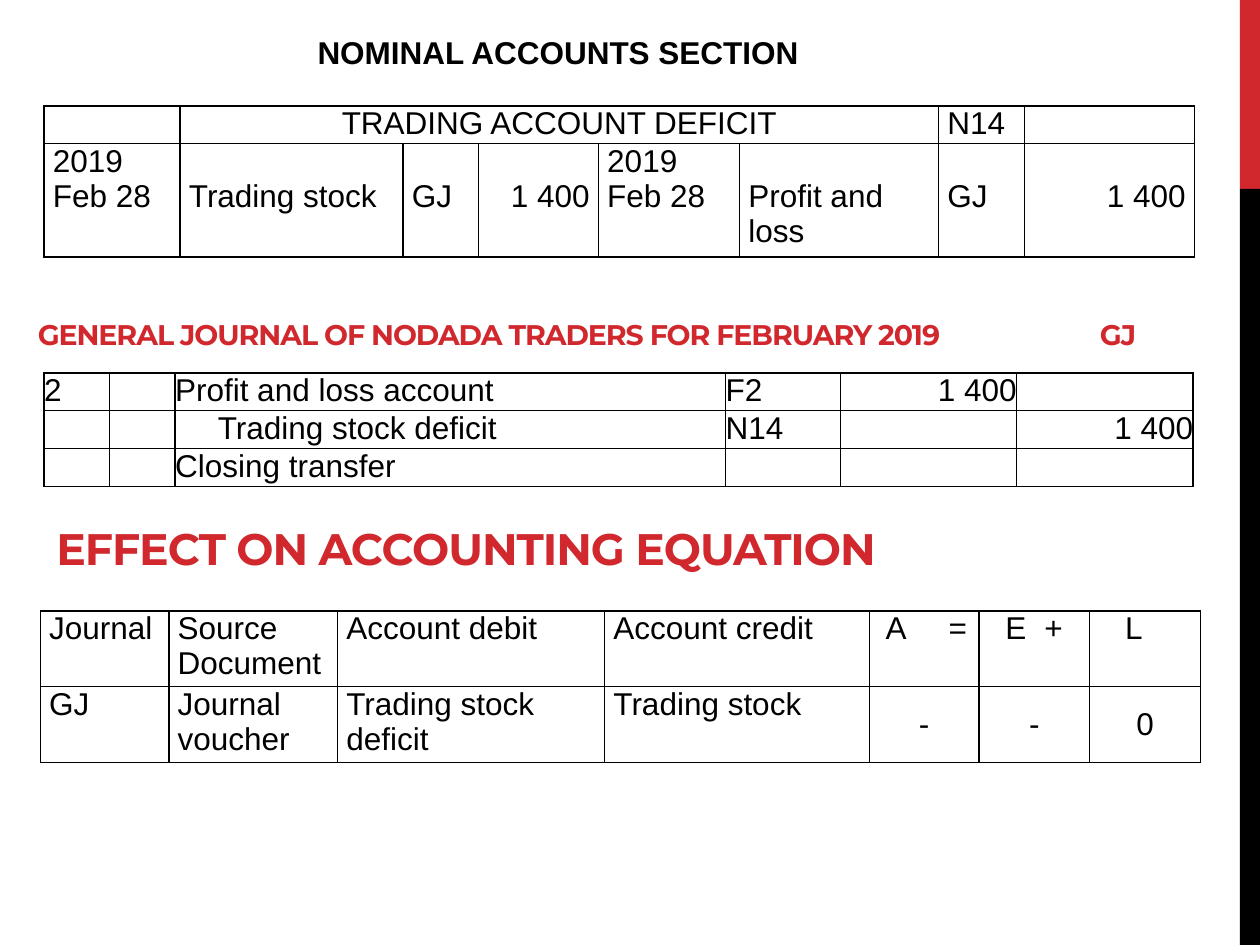
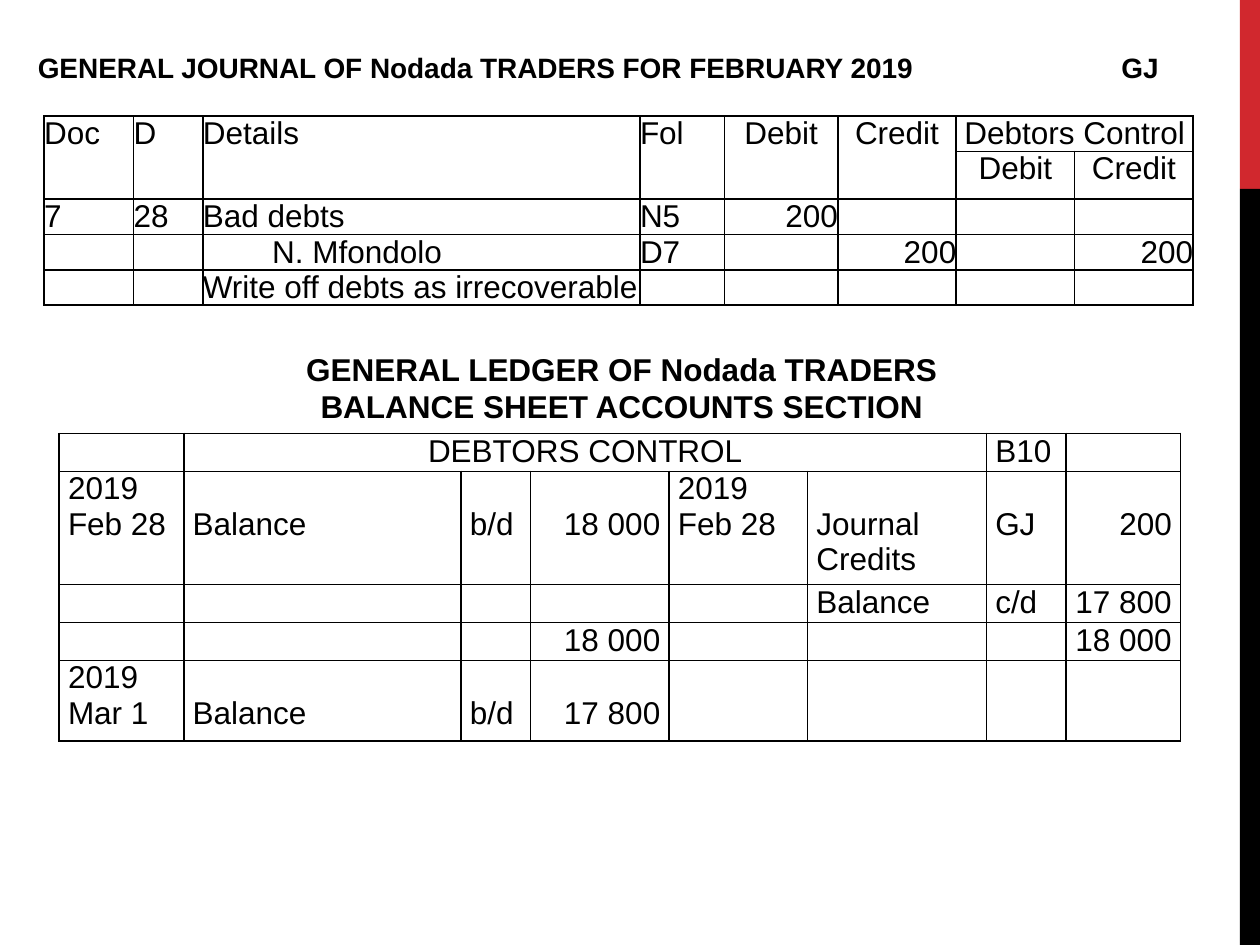
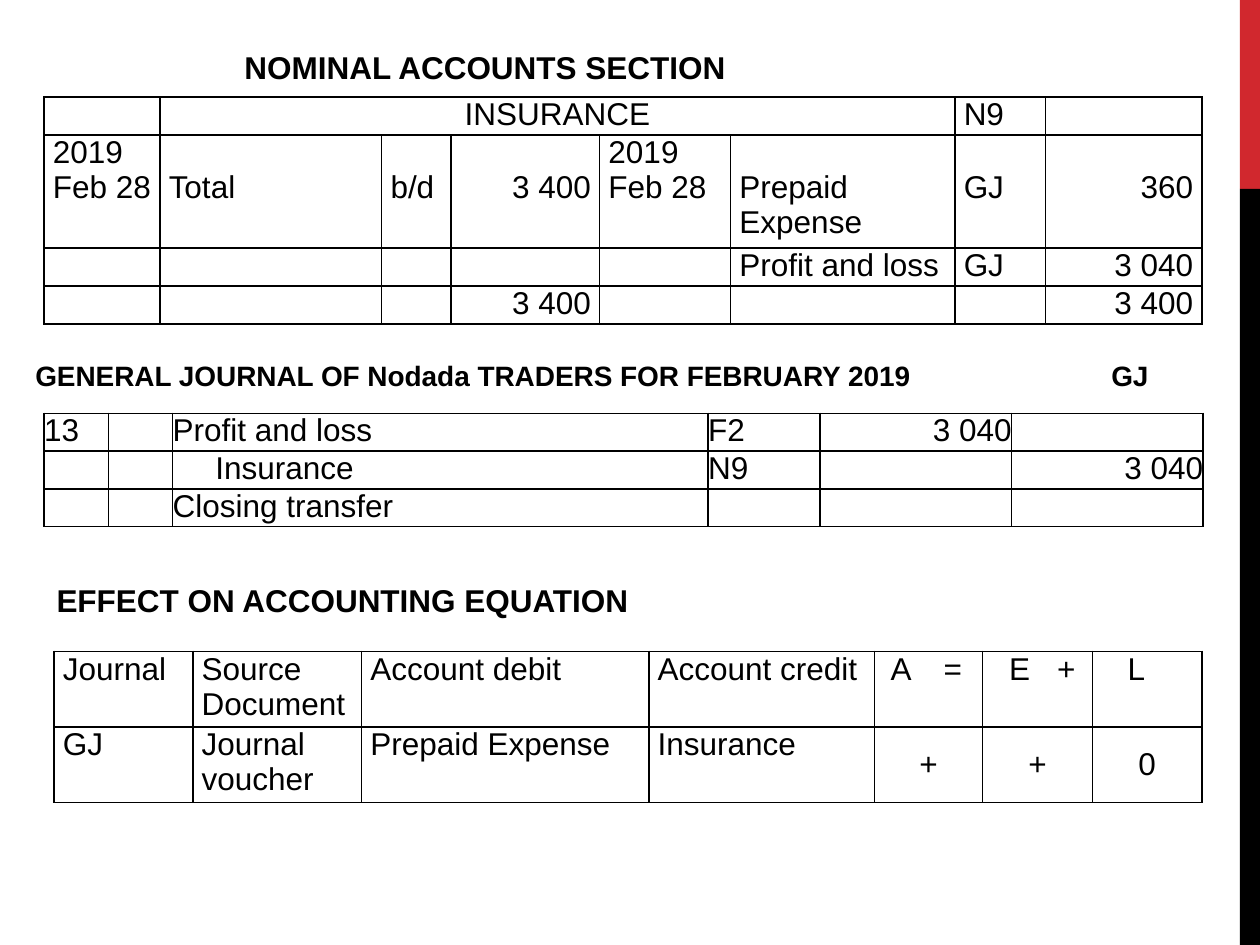
from dataclasses import dataclass, field

from lxml.etree import SubElement
from pptx import Presentation
from pptx.dml.color import RGBColor
from pptx.enum.shapes import MSO_SHAPE as Shape
from pptx.enum.text import MSO_ANCHOR as Anchor, MSO_AUTO_SIZE as AutoSize, PP_ALIGN as Align
from pptx.oxml.ns import qn
from pptx.util import Emu, Inches, Pt

RED, BLACK = "D1282E", "000000"
BODY_FONT, DISPLAY_FONT = "Arial", "Montserrat"
BODY_SIZE = 18
LINE = 0.28  # height of one line of body text
ROW = 0.3
ALIGNS = {"l": Align.LEFT, "c": Align.CENTER, "r": Align.RIGHT}


@dataclass
class Band:
    top: float
    height: float
    color: str


@dataclass
class Heading:
    text: str
    left: float
    top: float
    width: float
    height: float
    size: float = BODY_SIZE
    align: str = "l"
    tab: float = 0
    display: bool = False  # red display face instead of black body face
    is_title: bool = False


@dataclass
class CellStyle:
    align: str = "l"
    indent: float = 0
    drop: float = 0
    tab: float = 0
    anchor: Anchor = Anchor.TOP


@dataclass
class Grid:
    left: float
    top: float
    widths: list[float]
    heights: list[float]
    rows: list[list[str]]
    aligns: str  # one letter per column
    inset: float = 0
    merges: list[tuple[int, int, int, int]] = field(default_factory=list)
    styles: dict[tuple[int, int], CellStyle] = field(default_factory=dict)


BANDS = [Band(0, 1.5, RED), Band(1.5, 6, BLACK)]


# Formatting helpers
def rgb(color: str) -> RGBColor:
    return RGBColor.from_string(color)


def add_tab(paragraph, position: float) -> None:
    tabs = SubElement(paragraph._p.get_or_add_pPr(), qn("a:tabLst"))
    SubElement(tabs, qn("a:tab"), pos=str(Inches(position)), algn="l")


def format_paragraph(paragraph, size=BODY_SIZE, align="l", tab=0.0,
                     name=BODY_FONT, color=BLACK, bold=False) -> None:
    if tab:
        add_tab(paragraph, tab)
    paragraph.alignment = ALIGNS[align]
    font = paragraph.font
    font.name, font.size, font.bold = name, Pt(size), bold
    font.color.rgb = rgb(color)


def add_borders(cell) -> None:
    properties = cell._tc.get_or_add_tcPr()
    for side in ("lnL", "lnR", "lnT", "lnB"):
        line = SubElement(properties, qn(f"a:{side}"), w=str(Pt(1)))
        fill = SubElement(line, qn("a:solidFill"))
        SubElement(fill, qn("a:srgbClr"), val=BLACK)


# Drawing
def draw_band(slide, band: Band) -> None:
    bar = slide.shapes.add_shape(Shape.RECTANGLE, Inches(9.84), Inches(band.top),
                                 Inches(0.16), Inches(band.height))
    bar.shadow.inherit = False
    bar.fill.solid()
    bar.fill.fore_color.rgb = rgb(band.color)
    bar.line.fill.background()


def draw_heading(slide, heading: Heading) -> None:
    place = [Inches(v) for v in (heading.left, heading.top, heading.width, heading.height)]
    if heading.is_title:
        box = slide.shapes.title
        box.left, box.top, box.width, box.height = place
    else:
        box = slide.shapes.add_textbox(*place)
    frame = box.text_frame
    frame.text = heading.text
    frame.word_wrap = True
    frame.auto_size = AutoSize.NONE
    frame.vertical_anchor = Anchor.BOTTOM if heading.display else Anchor.MIDDLE
    for paragraph in frame.paragraphs:
        format_paragraph(paragraph, heading.size, heading.align, heading.tab,
                         DISPLAY_FONT if heading.display else BODY_FONT,
                         RED if heading.display else BLACK, bold=True)
        if heading.display:
            paragraph._p.pPr.find(qn("a:defRPr")).set("spc", "-60")


def draw_grid(slide, grid: Grid) -> None:
    table = slide.shapes.add_table(
        len(grid.rows), len(grid.widths), Inches(grid.left), Inches(grid.top),
        Inches(sum(grid.widths)), Inches(sum(grid.heights))).table
    table.first_row = table.horz_banding = False
    for column, width in zip(table.columns, grid.widths):
        column.width = Inches(width)
    for row, height in zip(table.rows, grid.heights):
        row.height = Inches(height)
    for r, texts in enumerate(grid.rows):
        for c, text in enumerate(texts):
            cell = table.cell(r, c)
            style = grid.styles.get((r, c), CellStyle(grid.aligns[c]))
            cell.text = text
            cell.margin_left = Inches(grid.inset + style.indent)
            cell.margin_right = Inches(grid.inset)
            cell.margin_top, cell.margin_bottom = Inches(style.drop), Emu(0)
            cell.vertical_anchor = style.anchor
            add_borders(cell)
            cell.fill.background()
            for paragraph in cell.text_frame.paragraphs:
                format_paragraph(paragraph, align=style.align, tab=style.tab)
    for r1, c1, r2, c2 in grid.merges:
        table.cell(r1, c1).merge(table.cell(r2, c2))


# The kinds of table the slides share
def ledger(left: float, top: float, widths: list[float], heights: list[float],
           account: str, folio: str, entries: list[list[str]]) -> Grid:
    """Ledger account: entries on a dated row sit level with the day."""
    aligns = "lllrlllr"
    styles = {(0, 1): CellStyle("c")}
    for r, entry in enumerate(entries, start=1):
        if entry[0]:
            styles |= {(r, c): CellStyle(aligns[c], drop=LINE)
                       for c in range(8) if c not in (0, 4)}
    header = ["", account, "", "", "", "", folio, ""]
    return Grid(left, top, widths, heights, [header, *entries], aligns, 0.07,
                [(0, 1, 0, 5)], styles)


def closing_journal(top: float, widths: list[float], number: str, debit: str,
                    credit: str, folio: str, amount: str) -> Grid:
    rows = [[number, "", debit, "F2", amount, ""],
            ["", "", credit, folio, "", amount],
            ["", "", "Closing transfer", "", "", ""]]
    return Grid(0.35, top, widths, [ROW] * 3, rows, "llllrr",
                styles={(1, 2): CellStyle(indent=0.34)})


def equation(left: float, top: float, widths: list[float], debit: str, credit: str,
             effects: list[str], equals_tab: float, plus_tab: float) -> Grid:
    rows = [["Journal", "Source Document", "Account debit", "Account credit",
             "A\t=", "E\t+", "L"],
            ["GJ", "Journal voucher", debit, credit, *effects]]
    styles = {(0, 4): CellStyle(indent=0.06, tab=equals_tab),
              (0, 5): CellStyle(indent=0.14, tab=plus_tab),
              (0, 6): CellStyle(indent=0.21)}
    styles |= {(1, c): CellStyle("c", anchor=Anchor.MIDDLE) for c in (4, 5, 6)}
    return Grid(left, top, widths, [2 * ROW] * 2, rows, "lllllll", 0.07, styles=styles)


def debtors_journal() -> Grid:
    rows = [["Doc", "D", "Details", "Fol", "Debit", "Credit", "Debtors Control", ""],
            ["", "", "", "", "", "", "Debit", "Credit"],
            ["7", "28", "Bad debts", "N5", "200", "", "", ""],
            ["", "", "N. Mfondolo", "D7", "", "200", "", "200"],
            ["", "", "Write off debts as irrecoverable", "", "", "", "", ""]]
    styles = {(r, c): CellStyle("c") for r in (0, 1) for c in range(4, 8)}
    styles[3, 2] = CellStyle(indent=0.55)
    merges = [(0, c, 1, c) for c in range(6)] + [(0, 6, 0, 7)]
    return Grid(0.35, 0.92, [0.71, 0.55, 3.47, 0.67, 0.9, 0.94, 0.94, 0.94],
                [LINE, 0.38, LINE, LINE, LINE], rows, "llllrrrr",
                merges=merges, styles=styles)


# Slide contents
JOURNAL_TITLE = "GENERAL JOURNAL OF Nodada TRADERS FOR FEBRUARY 2019\tGJ"
NOMINAL = "NOMINAL ACCOUNTS SECTION"
EFFECT = "EFFECT ON ACCOUNTING EQUATION"
FEB = "2019 Feb 28"

SLIDES = [
    # Trading stock deficit
    [Heading(JOURNAL_TITLE.upper(), 0.2, 2.33, 9.53, 0.51, 16.2, tab=8.43,
             display=True, is_title=True),
     Heading(NOMINAL, 2.4, 0.21, 4.06, 0.4, align="c"),
     ledger(0.35, 0.84, [1.08, 1.77, 0.6, 0.95, 1.12, 1.58, 0.68, 1.35], [ROW, 0.9],
            "TRADING ACCOUNT DEFICIT", "N14",
            [[FEB, "Trading stock", "GJ", "1 400", FEB, "Profit and loss", "GJ", "1 400"]]),
     closing_journal(2.96, [0.52, 0.52, 4.37, 0.91, 1.4, 1.4], "2",
                     "Profit and loss account", "Trading stock deficit", "N14", "1 400"),
     Heading(EFFECT, 0.35, 4.1, 8.83, 0.51, 25.2, display=True),
     equation(0.32, 4.85, [1.02, 1.34, 2.12, 2.1, 0.87, 0.88, 0.88],
              "Trading stock deficit", "Trading stock", ["-", "-", "0"], 0.5, 0.31)],
    # Bad debts
    [Heading(JOURNAL_TITLE, 0.2, 0.35, 9.45, 0.37, 16, tab=8.6, is_title=True),
     debtors_journal(),
     Heading("GENERAL LEDGER OF Nodada TRADERS\nBALANCE SHEET ACCOUNTS SECTION",
             0.21, 2.72, 9.45, 0.71, align="c"),
     ledger(0.47, 3.44, [0.99, 2.2, 0.55, 1.1, 1.1, 1.42, 0.63, 0.91],
            [ROW, 0.9, ROW, ROW, 0.64], "DEBTORS CONTROL", "B10",
            [[FEB, "Balance", "b/d", "18 000", FEB, "Journal Credits", "GJ", "200"],
             ["", "", "", "", "", "Balance", "c/d", "17 800"],
             ["", "", "", "18 000", "", "", "", "18 000"],
             ["2019 Mar 1", "Balance", "b/d", "17 800", "", "", "", ""]])],
    # Insurance
    [Heading(JOURNAL_TITLE, 0.18, 2.79, 9.37, 0.37, 16, tab=8.54, is_title=True),
     Heading(NOMINAL, 1.82, 0.33, 4.06, 0.4, align="c"),
     ledger(0.35, 0.77, [0.92, 1.76, 0.55, 1.18, 1.04, 1.78, 0.72, 1.24],
            [ROW, 0.9, ROW, ROW], "INSURANCE", "N9",
            [["2019\nFeb 28", "Total", "b/d", "3 400",
              "2019\nFeb 28", "Prepaid Expense", "GJ", "360"],
             ["", "", "", "", "", "Profit and loss", "GJ", "3 040"],
             ["", "", "", "3 400", "", "", "", "3 400"]]),
     closing_journal(3.28, [0.51, 0.51, 4.25, 0.89, 1.52, 1.52], "13",
                     "Profit and loss", "Insurance", "N9", "3 040"),
     Heading(EFFECT, 0.35, 4.56, 9.19, 0.4),
     equation(0.43, 5.17, [1.1, 1.34, 2.28, 1.79, 0.86, 0.87, 0.87],
              "Prepaid Expense", "Insurance", ["+", "+", "0"], 0.42, 0.38)],
]


def main() -> None:
    deck = Presentation()
    deck.slide_width, deck.slide_height = Inches(10), Inches(7.5)
    title_only = deck.slide_layouts[5]
    for parts in SLIDES:
        slide = deck.slides.add_slide(title_only)
        for band in BANDS:
            draw_band(slide, band)
        for part in parts:
            if isinstance(part, Heading):
                draw_heading(slide, part)
            else:
                draw_grid(slide, part)
    deck.save("out.pptx")


if __name__ == "__main__":
    main()
